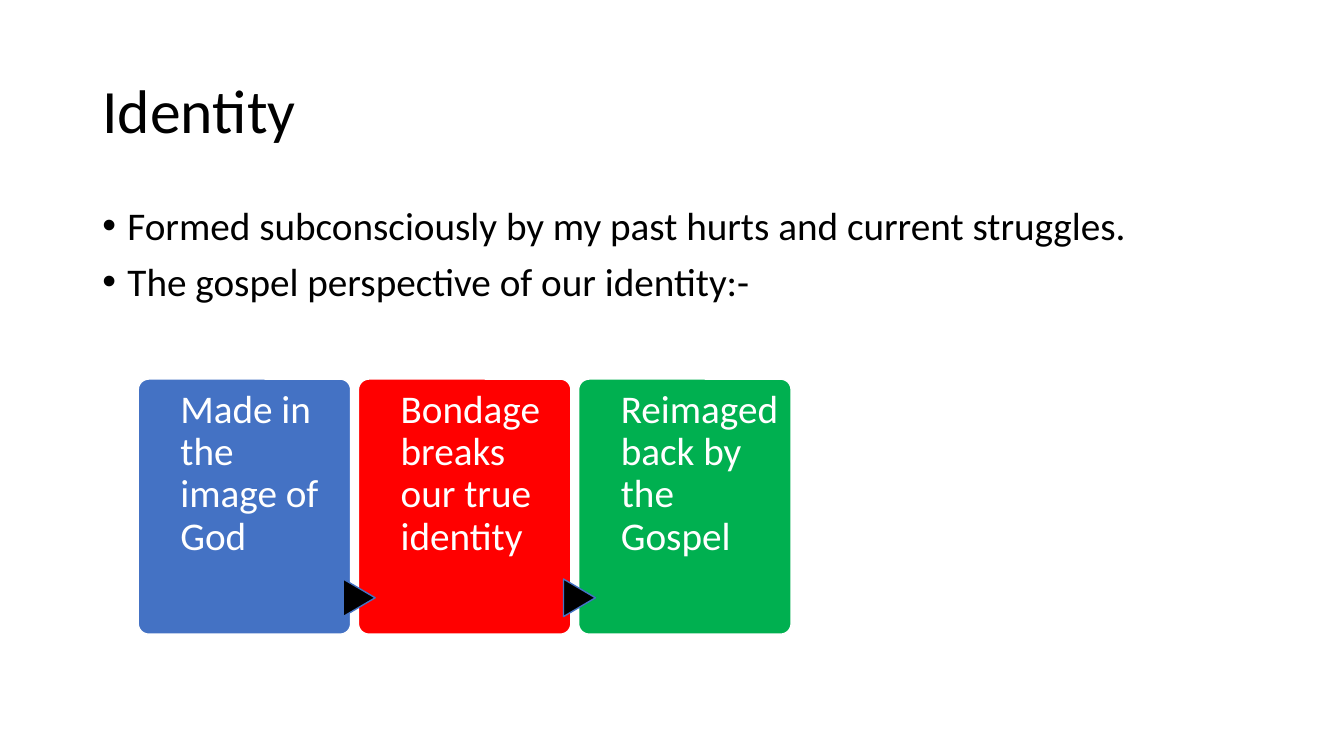
from dataclasses import dataclass

from lxml.etree import SubElement
from pptx import Presentation
from pptx.dml.color import RGBColor
from pptx.enum.shapes import MSO_SHAPE as Preset
from pptx.enum.text import MSO_ANCHOR as Anchor, MSO_AUTO_SIZE as AutoSize, PP_ALIGN as Align
from pptx.oxml.ns import qn
from pptx.shapes.autoshape import Shape
from pptx.slide import Slide
from pptx.text.text import TextFrame
from pptx.util import Pt


@dataclass(frozen=True)
class Theme:
    font: str = "Calibri"
    title_size: float = 44
    body_size: float = 28
    black: str = "000000"
    white: str = "FFFFFF"
    blue: str = "4472C4"
    red: str = "FF0000"
    green: str = "00B050"


@dataclass(frozen=True)
class Box:
    left: float
    top: float
    width: float
    height: float

    def shifted(self, distance: float) -> "Box":
        return Box(self.left + distance, self.top, self.width, self.height)

    def lengths(self) -> tuple[Pt, Pt, Pt, Pt]:
        return Pt(self.left), Pt(self.top), Pt(self.width), Pt(self.height)


@dataclass(frozen=True)
class Stage:
    text: str
    color: str


THEME = Theme()
TITLE_BOX = Box(66, 28.75, 828, 104.4)
BODY_BOX = Box(66, 143.75, 828, 104.4)
CARD_BOX = Box(98.7, 270.8, 151.8, 182.2)
LABEL_BOX = Box(128.9, 270.8, 113.1, 182.2)
ARROW_BOX = Box(243.2, 415.6, 26.8, 22.8)
STAGE_PITCH = 157.3

BODY_LINES = (
    "Formed subconsciously by my past hurts and current struggles.",
    "The gospel perspective of our identity:-",
)
STAGES = (
    Stage("Made in the image of God", THEME.blue),
    Stage("Bondage breaks our true identity", THEME.red),
    Stage("Reimaged back by the Gospel", THEME.green),
)


def write_text(
    frame: TextFrame,
    *lines: str,
    size: float = THEME.body_size,
    color: str = THEME.black,
    anchor: Anchor = Anchor.TOP,
    space_before: float = 0,
    bullet_indent: float = 0,
) -> None:
    frame.word_wrap = True
    frame.auto_size = AutoSize.NONE
    frame.vertical_anchor = anchor
    for index, line in enumerate(lines):
        paragraph = frame.add_paragraph() if index else frame.paragraphs[0]
        paragraph.alignment = Align.LEFT
        paragraph.line_spacing = 0.9
        paragraph.space_before = Pt(space_before)
        run = paragraph.add_run()
        run.text = line
        run.font.name = THEME.font
        run.font.size = Pt(size)
        run.font.color.rgb = RGBColor.from_string(color)
        if bullet_indent:
            properties = paragraph._p.get_or_add_pPr()
            properties.set("marL", str(Pt(bullet_indent)))
            properties.set("indent", str(-Pt(bullet_indent)))
            SubElement(properties, qn("a:buFont"), typeface="Arial")
            SubElement(properties, qn("a:buChar"), char="•")


def add_preset(slide: Slide, preset: Preset, box: Box, fill: str, line: str) -> Shape:
    shape = slide.shapes.add_shape(preset, *box.lengths())
    shape.shadow.inherit = False
    shape.fill.solid()
    shape.fill.fore_color.rgb = RGBColor.from_string(fill)
    shape.line.color.rgb = RGBColor.from_string(line)
    shape.line.width = Pt(1)
    return shape


def add_title(slide: Slide, text: str) -> None:
    title = slide.shapes.title
    title.left, title.top, title.width, title.height = TITLE_BOX.lengths()
    write_text(title.text_frame, text, size=THEME.title_size, anchor=Anchor.MIDDLE)


def add_body(slide: Slide) -> None:
    body = slide.shapes.add_textbox(*BODY_BOX.lengths())
    write_text(body.text_frame, *BODY_LINES, space_before=10, bullet_indent=18)


def add_stage(slide: Slide, stage: Stage, index: int) -> None:
    """Draw a card, the arrow leading into it, and its label."""
    offset = index * STAGE_PITCH
    card = add_preset(
        slide, Preset.ROUNDED_RECTANGLE, CARD_BOX.shifted(offset), stage.color, THEME.white
    )
    card.adjustments[0] = 0.05
    if index:
        arrow_box = ARROW_BOX.shifted(offset - STAGE_PITCH)
        arrow = add_preset(
            slide, Preset.FLOWCHART_EXTRACT, arrow_box, THEME.black, THEME.blue
        )
        arrow.rotation = 90
    label = slide.shapes.add_textbox(*LABEL_BOX.shifted(offset).lengths())
    frame = label.text_frame
    frame.margin_left = frame.margin_right = frame.margin_bottom = Pt(0)
    frame.margin_top = Pt(7.2)
    write_text(frame, stage.text, color=THEME.white)


def main() -> None:
    presentation = Presentation()
    presentation.slide_width, presentation.slide_height = Pt(960), Pt(540)
    title_only = presentation.slide_layouts.get_by_name("Title Only")
    slide = presentation.slides.add_slide(title_only)
    add_title(slide, "Identity")
    add_body(slide)
    for index, stage in enumerate(STAGES):
        add_stage(slide, stage, index)
    presentation.save("out.pptx")


if __name__ == "__main__":
    main()
